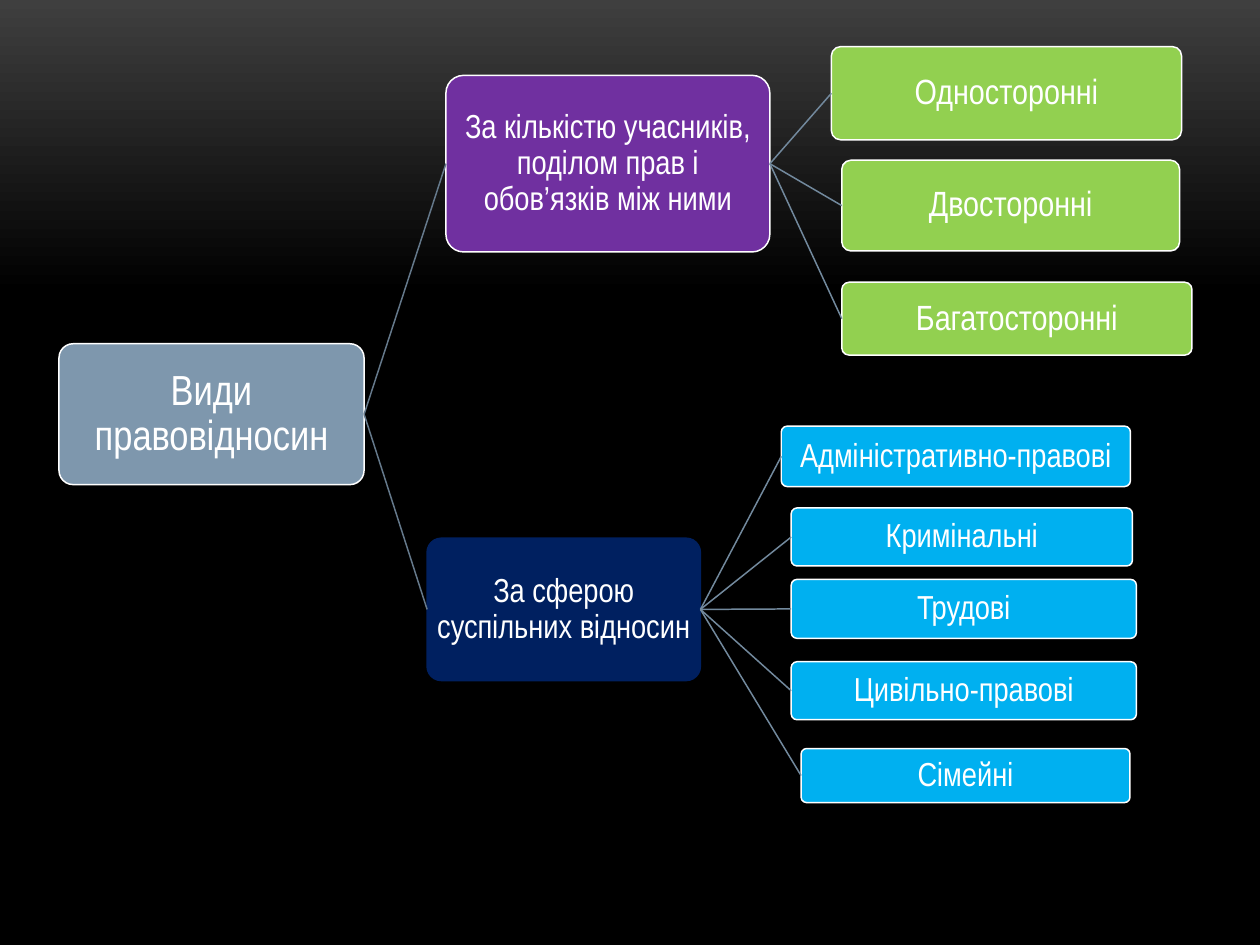
from dataclasses import dataclass

from lxml.etree import SubElement
from pptx import Presentation
from pptx.dml.color import RGBColor
from pptx.enum.shapes import MSO_CONNECTOR, MSO_SHAPE
from pptx.enum.text import MSO_ANCHOR, PP_ALIGN
from pptx.oxml.ns import qn
from pptx.shapes.autoshape import Shape
from pptx.slide import Slide
from pptx.util import Cm, Pt

WHITE = RGBColor(0xFF, 0xFF, 0xFF)
BLACK = RGBColor(0x00, 0x00, 0x00)
CHARCOAL = RGBColor(0x3F, 0x3F, 0x3F)
SLATE = RGBColor(0x7E, 0x97, 0xAD)
PURPLE = RGBColor(0x70, 0x30, 0xA0)
NAVY = RGBColor(0x00, 0x20, 0x60)
GREEN = RGBColor(0x92, 0xD0, 0x50)
BLUE = RGBColor(0x00, 0xB0, 0xF0)
TRUNK_LINE = RGBColor(0x65, 0x79, 0x8B)
TWIG_LINE = RGBColor(0x72, 0x89, 0x9D)
LINE_WIDTH = Pt(0.85)
RIGHT_SIDE, LEFT_SIDE = 3, 1


@dataclass(frozen=True)
class Node:
    """A box of the tree, measured in centimetres, with its branches."""
    text: str
    left: float
    top: float
    width: float
    height: float
    fill: RGBColor
    size: int
    outline: RGBColor = WHITE
    branch_line: RGBColor = TWIG_LINE
    children: tuple["Node", ...] = ()


BY_PARTIES = Node(
    "За кількістю учасників, поділом прав і обов’язків між ними",
    8.99, 1.52, 6.53, 3.56, PURPLE, 19,
    children=(
        Node("Односторонні", 16.76, 0.94, 7.06, 1.88, GREEN, 20),
        Node("Двосторонні", 16.97, 3.23, 6.81, 1.83, GREEN, 20),
        Node("Багатосторонні", 16.97, 5.69, 7.06, 1.47, GREEN, 20),
    ),
)
BY_SPHERE = Node(
    "За сферою суспільних відносин",
    8.61, 10.85, 5.51, 2.87, NAVY, 19, outline=NAVY,
    children=(
        Node("Адміністративно-правові", 15.75, 8.59, 7.04, 1.22, BLUE, 19),
        Node("Кримінальні", 15.95, 10.24, 6.88, 1.17, BLUE, 19),
        Node("Трудові", 15.95, 11.68, 6.96, 1.19, BLUE, 19),
        Node("Цивільно-правові", 15.95, 13.34, 6.96, 1.17, BLUE, 19),
        Node("Сімейні", 16.15, 15.09, 6.63, 1.09, BLUE, 19),
    ),
)
ROOT = Node(
    "Види правовідносин", 1.19, 6.93, 6.15, 2.84, SLATE, 24,
    branch_line=TRUNK_LINE, children=(BY_PARTIES, BY_SPHERE),
)


def paint_background(page: Slide) -> None:
    fill = page.background.fill
    fill.gradient()
    fill.gradient_angle = 270
    for stop, position, color in zip(fill.gradient_stops, (0, 0.31), (CHARCOAL, BLACK)):
        stop.position = position
        stop.color.rgb = color


def draw_box(page: Slide, node: Node) -> Shape:
    box = page.shapes.add_shape(
        MSO_SHAPE.ROUNDED_RECTANGLE,
        Cm(node.left), Cm(node.top), Cm(node.width), Cm(node.height),
    )
    box.adjustments[0] = 0.1
    box.shadow.inherit = False
    box.fill.solid()
    box.fill.fore_color.rgb = node.fill
    box.line.color.rgb = node.outline
    box.line.width = LINE_WIDTH

    frame = box.text_frame
    frame.word_wrap = True
    frame.vertical_anchor = MSO_ANCHOR.MIDDLE
    frame.margin_left = frame.margin_right = Cm(0.03)
    frame.margin_top = frame.margin_bottom = Cm(0.03)
    para = frame.paragraphs[0]
    para.text = node.text
    para.alignment = PP_ALIGN.CENTER
    para.line_spacing = 0.9
    para.font.name = "Arial Narrow"
    para.font.size = Pt(node.size)
    para.font.color.rgb = WHITE
    return box


def join_boxes(page: Slide, parent: Shape, child: Shape, color: RGBColor) -> None:
    connector = page.shapes.add_connector(MSO_CONNECTOR.STRAIGHT, 0, 0, 0, 0)
    connector.begin_connect(parent, RIGHT_SIDE)
    connector.end_connect(child, LEFT_SIDE)
    connector.line.color.rgb = color
    connector.line.width = LINE_WIDTH
    SubElement(connector.element.spPr, qn("a:effectLst"))


def draw_tree(page: Slide, node: Node) -> Shape:
    """Draw a node and everything below it; return the node's box."""
    box = draw_box(page, node)
    for child in node.children:
        join_boxes(page, box, draw_tree(page, child), node.branch_line)
    return box


def main() -> None:
    deck = Presentation()
    deck.slide_width, deck.slide_height = Cm(25.4), Cm(19.05)
    page = deck.slides.add_slide(deck.slide_layouts[6])
    paint_background(page)
    draw_tree(page, ROOT)
    deck.save("out.pptx")


if __name__ == "__main__":
    main()
